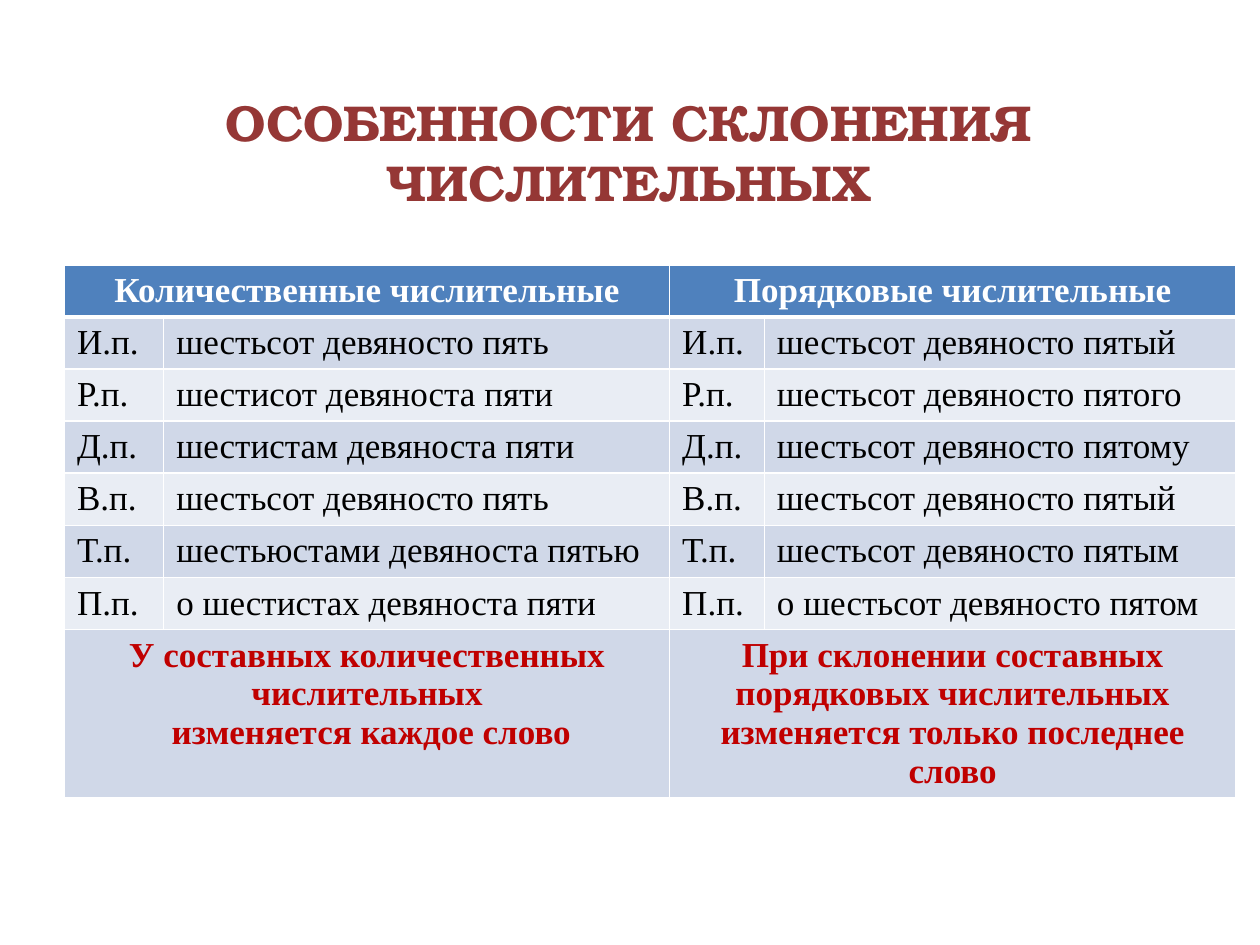
from lxml import etree
from pptx import Presentation
from pptx.dml.color import RGBColor
from pptx.enum.text import MSO_ANCHOR, PP_ALIGN
from pptx.oxml.ns import qn
from pptx.util import Cm, Pt

CENTER, LEFT = PP_ALIGN.CENTER, PP_ALIGN.LEFT
MIDDLE = MSO_ANCHOR.MIDDLE
COLORS = {
    "title": "953735",
    "head": "4F81BD",
    "dark": "D0D8E8",
    "light": "E9EDF4",
    "white": "FFFFFF",
    "black": "000000",
    "red": "C00000",
}
SERIF = "Times New Roman"
TITLE = "ОСОБЕННОСТИ СКЛОНЕНИЯ ЧИСЛИТЕЛЬНЫХ"
HEADS = ["Количественные числительные", "Порядковые числительные"]
CASES = [
    ("И.п.", "шестьсот девяносто пять", "шестьсот девяносто пятый"),
    ("Р.п.", "шестисот девяноста пяти", "шестьсот девяносто пятого"),
    ("Д.п.", "шестистам девяноста пяти", "шестьсот девяносто пятому"),
    ("В.п.", "шестьсот девяносто пять", "шестьсот девяносто пятый"),
    ("Т.п.", "шестьюстами девяноста пятью", "шестьсот девяносто пятым"),
    ("П.п.", "о шестистах девяноста пяти", "о шестьсот девяносто пятом"),
]
RULES = [
    "У составных количественных числительных\n изменяется каждое слово",
    "При склонении составных порядковых числительных изменяется только"
    " последнее слово",
]
WIDTHS = [2, 10.2, 1.91, 9.5]
ROW, LAST = 1.05, 3.39


def rgb(name):
    return RGBColor.from_string(COLORS[name])


def style(frame, font, size, color, bold, align):
    for para in frame.paragraphs:
        para.alignment = align
        for run in para.runs:
            run.font.name = font
            run.font.size = Pt(size)
            run.font.bold = bold
            run.font.color.rgb = rgb(color)


def add_title(slide):
    title = slide.shapes.title
    title.left, title.top = Cm(1.27), Cm(0)
    title.width, title.height = Cm(22.83), Cm(4.72)
    frame = title.text_frame
    frame.text = TITLE
    frame.word_wrap = True
    frame.vertical_anchor = MIDDLE
    frame.margin_top = Cm(1.5)
    style(frame, "TeX Gyre Bonum", 28.8, "title", True, CENTER)


def paint(cell, fill, edges):
    """Fill the cell and draw white borders; edges maps side to points."""
    props = cell._tc.get_or_add_tcPr()
    for side, width in edges.items():
        line = etree.SubElement(props, qn(f"a:ln{side}"), w=str(Pt(width)))
        solid = etree.SubElement(line, qn("a:solidFill"))
        etree.SubElement(solid, qn("a:srgbClr"), val=COLORS["white"])
    cell.fill.solid()
    cell.fill.fore_color.rgb = rgb(fill)


def put(cell, text, color, bold=False, align=LEFT):
    cell.text_frame.text = text
    style(cell.text_frame, SERIF, 20, color, bold, align)


def put_wide(table, row, texts, color):
    """Write two bold texts, each across a pair of columns."""
    for col, text in zip((0, 2), texts):
        table.cell(row, col).merge(table.cell(row, col + 1))
        put(table.cell(row, col), text, color, True, CENTER)


def add_cases(slide):
    last = len(CASES) + 1
    heights = [ROW] * last + [LAST]
    table = slide.shapes.add_table(
        len(heights), len(WIDTHS), Cm(1.3), Cm(5.34),
        Cm(sum(WIDTHS)), Cm(sum(heights)),
    ).table
    for col, width in zip(table.columns, WIDTHS):
        col.width = Cm(width)
    for i, height in enumerate(heights):
        table.rows[i].height = Cm(height)
        fill = "head" if i == 0 else "dark" if i % 2 else "light"
        edges = {"L": 1, "R": 1, "T": 3 if i == 1 else 1,
                 "B": 3 if i == 0 else 1}
        for cell in table.rows[i].cells:
            paint(cell, fill, edges)
    put_wide(table, 0, HEADS, "white")
    for i, (case, count, order) in enumerate(CASES, 1):
        for j, text in enumerate((case, count, case, order)):
            put(table.cell(i, j), text, "black")
    put_wide(table, last, RULES, "red")


def main():
    deck = Presentation()
    deck.slide_width, deck.slide_height = Cm(25.4), Cm(19.05)
    slide = deck.slides.add_slide(deck.slide_layouts[5])
    add_title(slide)
    add_cases(slide)
    deck.save("out.pptx")


if __name__ == "__main__":
    main()
